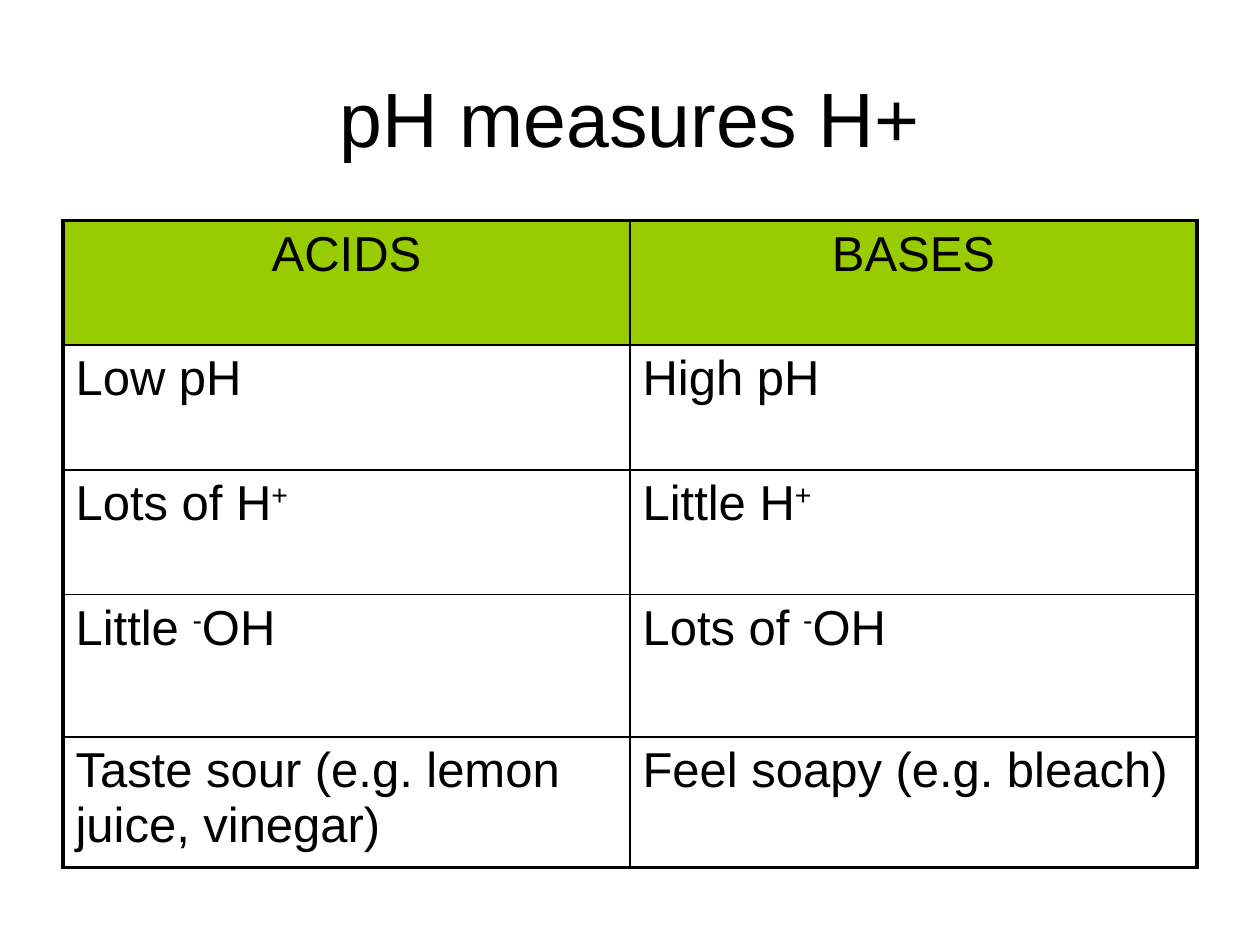
from pptx import Presentation
from pptx.dml.color import RGBColor
from pptx.enum import text
from pptx.oxml import parse_xml
from pptx.oxml.ns import nsdecls
from pptx.util import Inches, Pt

BLACK = RGBColor(0x00, 0x00, 0x00)
GREEN = RGBColor(0x99, 0xCC, 0x00)
FONT = "Arial"
THICK, THIN = 2.25, 1

# Content: "^" comes before and after a superscript
TITLE = "pH measures H+"
COMPARISON = [
    ("ACIDS", "BASES"),
    ("Low pH", "High pH"),
    ("Lots of H^+^", "Little H^+^"),
    ("Little ^-^OH", "Lots of ^-^OH"),
    ("Taste sour (e.g. lemon juice, vinegar)", "Feel soapy (e.g. bleach)"),
]
ROW_HEIGHTS = [0.99, 0.99, 0.99, 1.13, 1.03]
LEFT, TOP, WIDTH = 0.5, 1.75, 9


def write(paragraph, words, size, align):
    paragraph.alignment = align
    paragraph.font.name = FONT
    paragraph.font.size = Pt(size)
    paragraph.font.color.rgb = BLACK
    for i, part in enumerate(words.split("^")):
        if part:
            run = paragraph.add_run()
            run.text = part
            if i % 2:
                run._r.get_or_add_rPr().set("baseline", "30000")


def add_border(cell, side, points):
    cell._tc.get_or_add_tcPr().append(parse_xml(
        f'<a:ln{side} {nsdecls("a")} w="{Pt(points)}"><a:solidFill>'
        f'<a:srgbClr val="{BLACK}"/></a:solidFill></a:ln{side}>'))


prs = Presentation()
prs.slide_width, prs.slide_height = Inches(10), Inches(7.5)
slide = prs.slides.add_slide(prs.slide_layouts[6])

# Title
title = slide.shapes.add_textbox(
    Inches(LEFT), Inches(0.3), Inches(WIDTH), Inches(1.25)).text_frame
title.word_wrap = True
title.vertical_anchor = text.MSO_ANCHOR.MIDDLE
write(title.paragraphs[0], TITLE, 44, text.PP_ALIGN.CENTER)

# Comparison table, thick outside and thin inside
n_rows, n_cols = len(COMPARISON), len(COMPARISON[0])
table = slide.shapes.add_table(
    n_rows, n_cols, Inches(LEFT), Inches(TOP),
    Inches(WIDTH), Inches(sum(ROW_HEIGHTS))).table
table.first_row = table.horz_banding = False

for r, (height, entries) in enumerate(zip(ROW_HEIGHTS, COMPARISON)):
    table.rows[r].height = Inches(height)
    for c, entry in enumerate(entries):
        cell = table.cell(r, c)
        outer_sides = {"L": c == 0, "R": c == n_cols - 1,
                       "T": r == 0, "B": r == n_rows - 1}
        for side, is_outer in outer_sides.items():
            add_border(cell, side, THICK if is_outer else THIN)
        if r == 0:
            cell.fill.solid()
            cell.fill.fore_color.rgb = GREEN
        else:
            cell.fill.background()
        align = text.PP_ALIGN.LEFT if r else text.PP_ALIGN.CENTER
        write(cell.text_frame.paragraphs[0], entry, 28, align)

prs.save("out.pptx")
